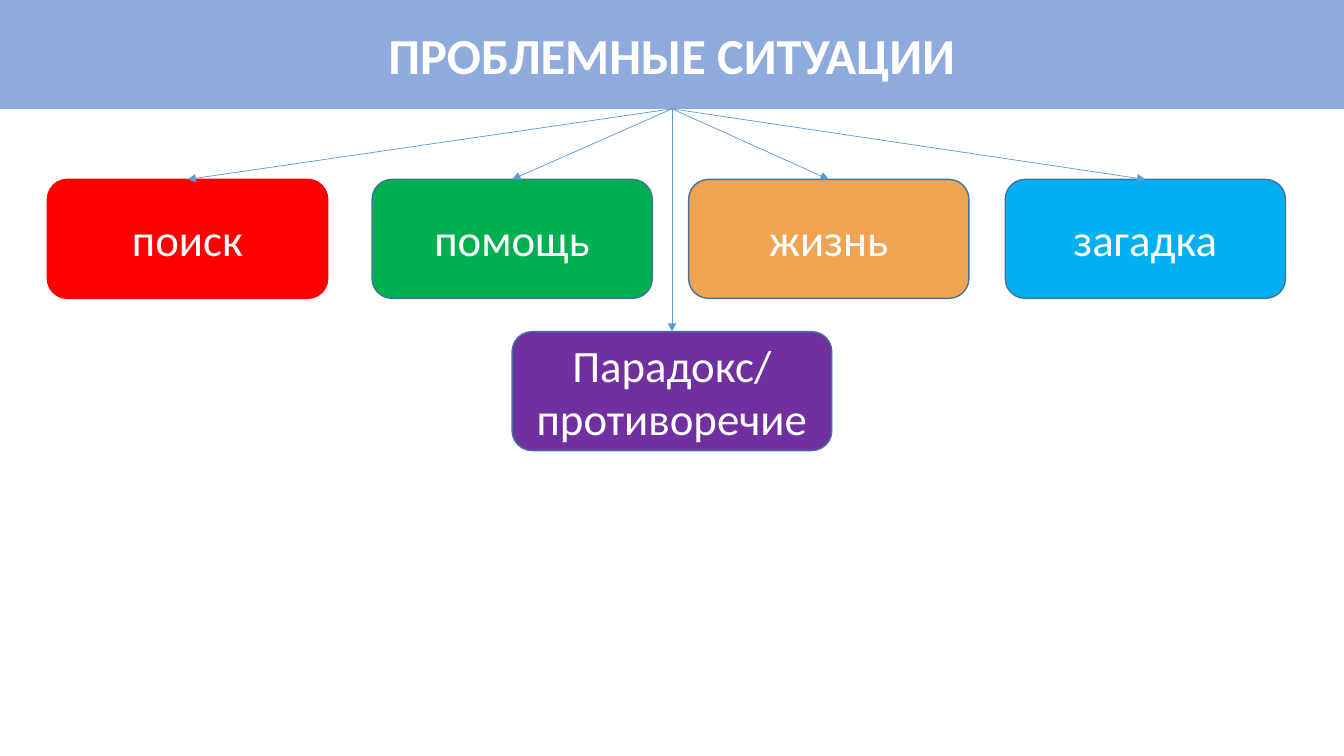
"""Build a slide that branches problem situations into five kinds."""
from dataclasses import dataclass

from pptx import Presentation
from pptx import util as u
from pptx.dml.color import RGBColor
from pptx.enum import shapes, text
from pptx.oxml.ns import qn
from pptx.shapes.autoshape import Shape
from pptx.slide import Slide
from lxml import etree


@dataclass(frozen=True)
class Theme:
    font: str = "Calibri"
    title_size: int = 36
    box_size: int = 32
    text: str = "FFFFFF"
    band: str = "8FAADC"
    outline: str = "43739E"
    arrow: str = "5B9BD5"
    box_line: float = 1
    arrow_line: float = 0.5


@dataclass(frozen=True)
class Situation:
    label: str
    fill: str
    left: float
    top: float = 1.78
    width: float = 2.78
    height: float = 1.18
    outline: str = Theme.outline


THEME = Theme()
SLIDE_W, SLIDE_H = 13.33, 7.5
BAND_TOP, BAND_H = -0.01, 1.09
ROW_LEFT, ROW_STEP = 3.69, 3.14
BOTTOM, TOP = 2, 0
SITUATIONS = (
    Situation("поиск", "FF0000", 0.47, outline="FF0000"),
    *(Situation(label, fill, ROW_LEFT + i * ROW_STEP)
      for i, (label, fill) in enumerate((("помощь", "00B050"),
                                         ("жизнь", "F0A351"),
                                         ("загадка", "00B0F0")))),
    Situation("Парадокс/\nпротиворечие", "7030A0", 5.08, top=3.29, width=3.17),
)


def set_text(sp: Shape, words: str, size: int, bold: bool = False) -> None:
    tf = sp.text_frame
    tf.text = words
    frame_format = {"word_wrap": True, "auto_size": text.MSO_AUTO_SIZE.NONE,
                    "vertical_anchor": text.MSO_ANCHOR.MIDDLE}
    for name, value in frame_format.items():
        setattr(tf, name, value)
    font_format = {"name": THEME.font, "size": u.Pt(size), "bold": bold}
    for p in tf.paragraphs:
        p.alignment = text.PP_ALIGN.CENTER
        for r in p.runs:
            for name, value in font_format.items():
                setattr(r.font, name, value)
            r.font.color.rgb = RGBColor.from_string(THEME.text)


def set_fill(sp: Shape, color: str) -> None:
    sp.fill.solid()
    sp.fill.fore_color.rgb = RGBColor.from_string(color)


def add_title(s: Slide) -> Shape:
    sp = s.shapes.title
    place = {"left": 0, "top": BAND_TOP, "width": SLIDE_W, "height": BAND_H}
    for name, value in place.items():
        setattr(sp, name, u.Inches(value))
    set_fill(sp, THEME.band)
    set_text(sp, "ПРОБЛЕМНЫЕ СИТУАЦИИ", THEME.title_size, bold=True)
    margins = {"margin_left": 0.13, "margin_right": 0.13,
               "margin_top": 0.07, "margin_bottom": 0.07}
    for name, value in margins.items():
        setattr(sp.text_frame, name, u.Inches(value))
    return sp


def add_box(s: Slide, box: Situation) -> Shape:
    place = map(u.Inches, (box.left, box.top, box.width, box.height))
    sp = s.shapes.add_shape(shapes.MSO_SHAPE.ROUNDED_RECTANGLE, *place)
    sp.shadow.inherit = False
    set_fill(sp, box.fill)
    sp.line.color.rgb = RGBColor.from_string(box.outline)
    sp.line.width = u.Pt(THEME.box_line)
    set_text(sp, box.label, THEME.box_size)
    return sp


def add_arrow(s: Slide, start: Shape, end: Shape) -> None:
    cxn = s.shapes.add_connector(shapes.MSO_CONNECTOR.STRAIGHT, 0, 0, 0, 0)
    cxn.begin_connect(start, BOTTOM)
    cxn.end_connect(end, TOP)
    cxn.line.color.rgb = RGBColor.from_string(THEME.arrow)
    cxn.line.width = u.Pt(THEME.arrow_line)
    etree.SubElement(cxn.line._get_or_add_ln(), qn("a:tailEnd"), type="triangle")
    etree.SubElement(cxn._element.spPr, qn("a:effectLst"))


def main() -> None:
    prs = Presentation()
    prs.slide_width, prs.slide_height = u.Inches(SLIDE_W), u.Inches(SLIDE_H)
    s = prs.slides.add_slide(prs.slide_layouts[5])
    title = add_title(s)
    boxes = [add_box(s, situation) for situation in SITUATIONS]
    for box in boxes:
        add_arrow(s, title, box)
    prs.save("out.pptx")


if __name__ == "__main__":
    main()
